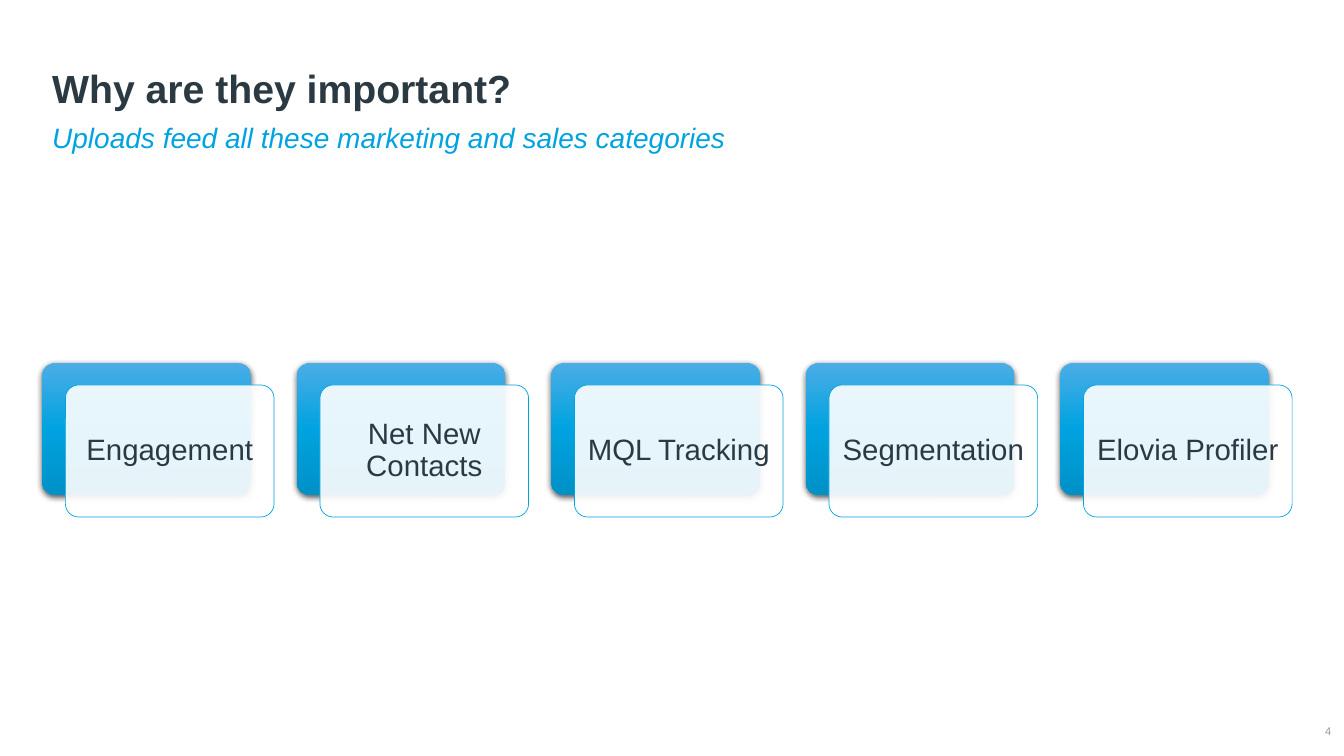
import pptx
import pptx.util
import pptx.dml.color
import pptx.enum.shapes
import pptx.enum.text
import pptx.oxml
import pptx.oxml.ns

Pt = pptx.util.Pt
qn = pptx.oxml.ns.qn
ANCHOR = pptx.enum.text.MSO_ANCHOR
ALIGN = pptx.enum.text.PP_ALIGN
NS = pptx.oxml.ns.nsdecls("a")

COLORS = {
    "ink": "2B3A42",
    "blue": "00A3E0",
    "light_blue": "4BADE6",
    "dark_blue": "0091C7",
    "grey": "959CA0",
    "white": "FFFFFF",
    "shadow": "000000",
}
CATEGORIES = ["Engagement", "Net New Contacts", "MQL Tracking",
              "Segmentation", "Elovia Profiler"]


def rgb(name):
    return pptx.dml.color.RGBColor.from_string(COLORS[name])


def write(sp, text, size, color="ink", bold=False, italic=False,
          align=ALIGN.LEFT, anchor=ANCHOR.TOP, inset=(7.2, 3.6), spacing=0.9):
    """Put one formatted paragraph in a shape; inset is (sides, top and bottom)."""
    tf = sp.text_frame
    tf.word_wrap = True
    tf.vertical_anchor = anchor
    tf.margin_left = tf.margin_right = Pt(inset[0])
    tf.margin_top = tf.margin_bottom = Pt(inset[1])
    p = tf.paragraphs[0]
    p.alignment = align
    p.line_spacing = spacing
    r = p.add_run()
    r.text = text
    r.font.name = "Arial"
    r.font.size = Pt(size)
    r.font.bold = bold
    r.font.italic = italic
    r.font.color.rgb = rgb(color)


def add_text(s, box, text, size, **fmt):
    write(s.shapes.add_textbox(*map(Pt, box)), text, size, **fmt)


def add_rounded(s, x, y, w, h):
    sp = s.shapes.add_shape(pptx.enum.shapes.MSO_SHAPE.ROUNDED_RECTANGLE,
                            Pt(x), Pt(y), Pt(w), Pt(h))
    sp.adjustments[0] = 0.1
    sp.shadow.inherit = False
    return sp


def fill_vertical(sp, names):
    """Fill with a top-to-bottom gradient of evenly spaced colours."""
    sp.fill.gradient()
    sp.fill.gradient_angle = 270
    stops = sp._element.spPr.find(".//" + qn("a:gsLst"))
    for stop in list(stops):
        stops.remove(stop)
    for i, name in enumerate(names):
        pos = 100000 * i // (len(names) - 1)
        stops.append(pptx.oxml.parse_xml(
            f'<a:gs {NS} pos="{pos}"><a:srgbClr val="{COLORS[name]}"/></a:gs>'))


def add_shadow(sp):
    sp._element.spPr.find(qn("a:effectLst")).append(pptx.oxml.parse_xml(
        f'<a:outerShdw {NS} blurRad="{Pt(4.5)}" dist="{Pt(1.5)}" dir="5400000" '
        f'rotWithShape="0"><a:srgbClr val="{COLORS["shadow"]}">'
        '<a:alpha val="63000"/></a:srgbClr></a:outerShdw>'))


def add_card(s, x, y, w, h, label):
    """Draw a blue block with a translucent labelled panel over its lower right."""
    dx, dy = 16.55, 15.8
    block = add_rounded(s, x, y, w - dx, h - dy)
    fill_vertical(block, ["light_blue", "blue", "dark_blue"])
    block.line.fill.background()
    add_shadow(block)

    panel = add_rounded(s, x + dx, y + dy, w - dx, h - dy)
    panel.fill.solid()
    panel.fill.fore_color.rgb = rgb("white")
    panel._element.spPr.find(qn("a:solidFill"))[0].append(
        pptx.oxml.parse_xml(f'<a:alpha {NS} val="90000"/>'))
    panel.line.color.rgb = rgb("blue")
    panel.line.width = Pt(0.5)
    write(panel, label, 21, align=ALIGN.CENTER, anchor=ANCHOR.MIDDLE, inset=(6, 6))


def add_header(s, x, y, w):
    add_text(s, (x, y, w, 60.5), "Why are they important?", 28,
             bold=True, anchor=ANCHOR.BOTTOM)
    add_text(s, (x, y + 62, w, 31.7),
             "Uploads feed all these marketing and sales categories", 20,
             color="blue", italic=True)


def add_cards(s, x, y, w, h):
    gap = 16.2
    card_w = (w - gap * (len(CATEGORIES) - 1)) / len(CATEGORIES)
    for i, label in enumerate(CATEGORIES):
        add_card(s, x + i * (card_w + gap), y, card_w, h, label)


def main():
    prs = pptx.Presentation()
    prs.slide_width, prs.slide_height = Pt(960), Pt(540)
    s = prs.slides.add_slide(prs.slide_layouts[6])
    add_text(s, (923, 515.5, 28, 13.7), "4", 8, color="grey", align=ALIGN.RIGHT,
             anchor=ANCHOR.MIDDLE, inset=(0, 0), spacing=1.0)
    add_header(s, 30.2, 23, 893)
    add_cards(s, 30.2, 259.2, 892.8, 110.1)
    prs.save("out.pptx")


if __name__ == "__main__":
    main()
